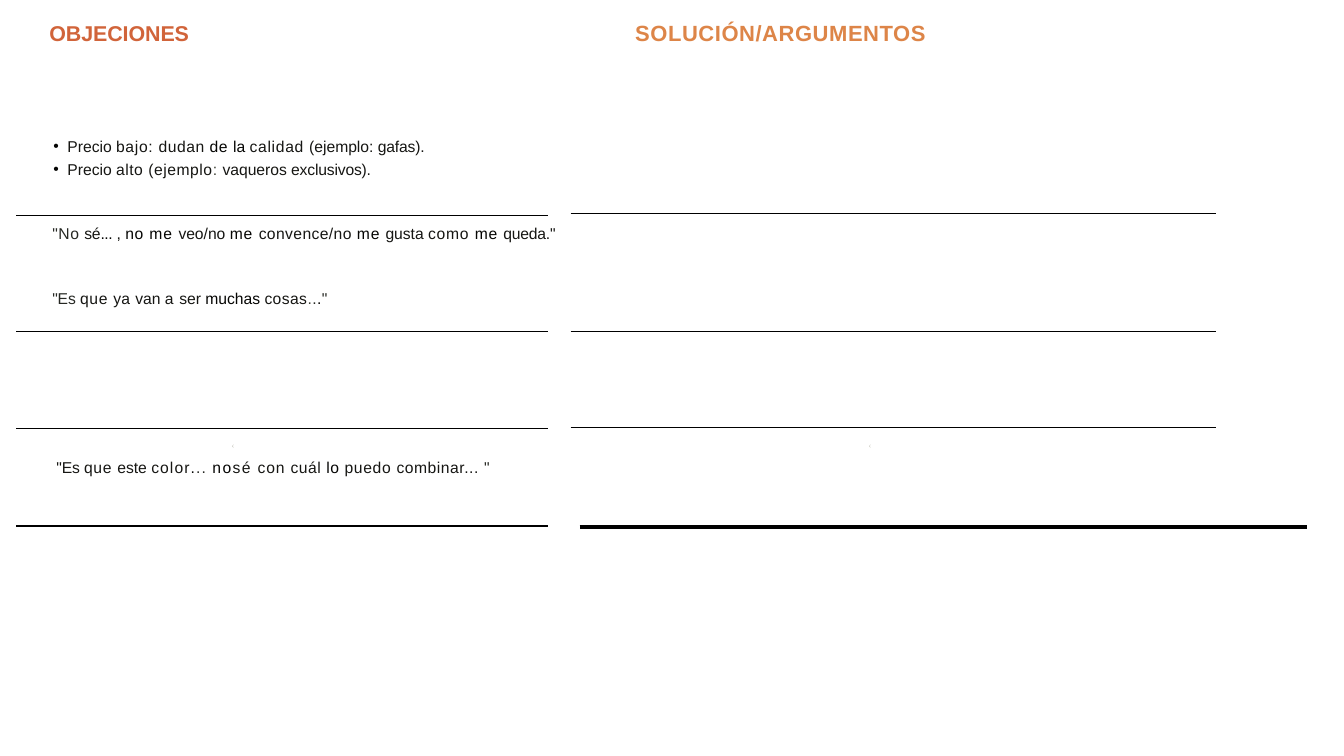
"""Builds the slide that sets customer objections beside their arguments."""
from dataclasses import dataclass

from lxml import etree
from pptx import Presentation
from pptx.dml.color import RGBColor
from pptx.enum.shapes import MSO_CONNECTOR
from pptx.enum.text import MSO_ANCHOR, MSO_AUTO_SIZE, PP_ALIGN
from pptx.oxml.ns import qn
from pptx.util import Inches, Pt

STRAIGHT = MSO_CONNECTOR.STRAIGHT
TOP = MSO_ANCHOR.TOP
LEFT = PP_ALIGN.LEFT
NO_FIT = MSO_AUTO_SIZE.NONE


@dataclass(frozen=True)
class Theme:
    font: str = "Arial"
    speck_font: str = "Times New Roman"
    deep: str = "050503"
    ink: str = "161613"
    soft: str = "262823"
    pale: str = "3F4238"
    rule: str = "000000"
    objections: str = "D1643A"
    arguments: str = "DD8548"
    left_speck: str = "959385"
    right_speck: str = "A09E8C"
    body_size: float = 11.2
    objections_size: float = 15.3
    arguments_size: float = 15.7
    speck_size: float = 2.7
    thin: float = 0.96
    thick: float = 2.41


T = Theme()


@dataclass(frozen=True)
class Run:
    text: str
    color: str = T.ink
    spacing: float = 0


@dataclass(frozen=True)
class Para:
    runs: list[Run]
    before: float = 0
    margin: float = 0.01
    bullet: bool = False
    line: float = 1


@dataclass(frozen=True)
class Block:
    left: float
    top: float
    width: float
    height: float
    inset: float
    paras: list[Para]
    size: float = T.body_size
    font: str = T.font
    bold: bool = False


@dataclass(frozen=True)
class Rule:
    left: float
    y: float
    width: float
    weight: float = T.thin


HEADING = Block(0.31, 0.13, 5.17, 0.33, 0.07, [
    Para([Run("OBJECIONES", T.objections, -0.1)], margin=0.18),
], T.objections_size, bold=True)

BLOCKS = [
    Block(6.24, 0.13, 5.17, 0.33, 0.06, [
        Para([Run("SOLUCIÓN/ARGUMENTOS", T.arguments, 0.4)], margin=0.06),
    ], T.arguments_size, bold=True),
    Block(0.51, 1.31, 5.17, 1.76, 0.05, [
        Para([
            Run("Precio "), Run("bajo: ", spacing=0.5), Run("dudan ", spacing=0.4),
            Run("de ", T.deep, 0.4), Run("la ", T.deep), Run("calidad ", spacing=0.5),
            Run("(ejemplo: "), Run("gafas).", spacing=-0.1),
        ], margin=0.16, bullet=True),
        Para([
            Run("Precio "), Run("alto (ejemplo", spacing=0.4), Run(": ", T.pale, 0.4),
            Run("vaqueros "), Run("exclusivos).", spacing=-0.1),
        ], before=2.9, margin=0.16, bullet=True),
        Para([
            Run("\"No ", T.soft, 0.4), Run("sé", spacing=-0.3), Run("... ", T.deep, -0.3),
            Run(", "), Run("no ", T.deep, 0.6), Run("me ", T.deep, 0.7), Run("veo/no "),
            Run("me ", T.deep, 0.7), Run("convence/no ", spacing=0.3),
            Run("me ", T.deep, 0.6), Run("gusta "), Run("como ", spacing=0.6),
            Run("me ", T.deep, 0.6), Run("queda.\"", spacing=-0.1),
        ], before=29, line=1.22),
        Para([
            Run("\"Es ", T.soft, -0.1), Run("que ", spacing=0.5), Run("ya ", spacing=0.3),
            Run("van "), Run("a ", spacing=0.5), Run("ser "), Run("muchas ", T.deep),
            Run("cosas", spacing=0.3), Run(".", T.pale, 0.3), Run(".", T.soft, 0.3),
            Run(".", T.deep, 0.3), Run("\"", T.soft, 0.3),
        ], before=33),
    ]),
    Block(0.55, 4.49, 4.31, 0.24, 0.05, [
        Para([
            Run("\"Es ", spacing=-0.1), Run("que ", spacing=0.5), Run("este "),
            Run("color", spacing=0.8), Run(".", T.deep, 0.8), Run(".. ", T.soft, 0.8),
            Run("no", T.deep, 1), Run("sé ", spacing=1), Run("con ", spacing=0.6),
            Run("cuál ", spacing=0.4), Run("lo ", T.deep, 0.4), Run("puedo ", spacing=0.5),
            Run("combinar... ", spacing=0.4), Run("\"", T.soft, -0.3),
        ]),
    ]),
    *(Block(left, 4.39, 0.05, 0.06, 0.01, [Para([Run(".(", color, -0.2)])],
            T.speck_size, T.speck_font)
      for left, color in ((2.29, T.left_speck), (8.61, T.right_speck))),
]

RULES = [
    *(Rule(0.16, y, 5.28) for y in (2.14, 3.29, 4.25, 5.22)),
    *(Rule(5.66, y, 6.4) for y in (2.12, 3.29, 4.24)),
    Rule(5.75, 5.23, 7.21, T.thick),
]


def set_indent(p, para: Para) -> None:
    """Set the left margin and, where asked, the hanging bullet."""
    pPr = p._p.get_or_add_pPr()
    pPr.set("marL", str(Inches(para.margin)))
    pPr.set("indent", str(Inches(-0.14 if para.bullet else 0)))
    if para.bullet:
        color = etree.SubElement(pPr, qn("a:buClr"))
        etree.SubElement(color, qn("a:srgbClr"), val=T.deep)
        etree.SubElement(pPr, qn("a:buFont"), typeface=T.font)
        etree.SubElement(pPr, qn("a:buChar"), char="•")


def fill_block(s, block: Block) -> None:
    """Place a text shape and write its paragraphs."""
    s.left, s.top = Inches(block.left), Inches(block.top)
    s.width, s.height = Inches(block.width), Inches(block.height)
    tf = s.text_frame
    tf.word_wrap = True
    tf.auto_size = NO_FIT
    tf.vertical_anchor = TOP
    tf.margin_left = tf.margin_right = tf.margin_bottom = 0
    tf.margin_top = Inches(block.inset)
    for i, para in enumerate(block.paras):
        p = tf.add_paragraph() if i else tf.paragraphs[0]
        set_indent(p, para)
        p.alignment = LEFT
        p.space_before = Pt(para.before)
        p.line_spacing = para.line
        for run in para.runs:
            r = p.add_run()
            r.text = run.text
            r.font.name = block.font
            r.font.size = Pt(block.size)
            r.font.bold = block.bold
            r.font.color.rgb = RGBColor.from_string(run.color)
            r._r.get_or_add_rPr().set("spc", str(round(run.spacing * 100)))


def draw_rule(slide, rule: Rule) -> None:
    """Draw one horizontal rule."""
    y = Inches(rule.y)
    s = slide.shapes.add_connector(
        STRAIGHT, Inches(rule.left), y, Inches(rule.left + rule.width), y)
    s.line.color.rgb = RGBColor.from_string(T.rule)
    s.line.width = Pt(rule.weight)
    etree.SubElement(s._element.spPr, qn("a:effectLst"))


def main() -> None:
    """Build and save the slide."""
    prs = Presentation()
    prs.slide_width, prs.slide_height = Inches(13.33), Inches(7.5)
    slide = prs.slides.add_slide(prs.slide_layouts[5])
    fill_block(slide.shapes.title, HEADING)
    for rule in RULES:
        draw_rule(slide, rule)
    for block in BLOCKS:
        fill_block(slide.shapes.add_textbox(0, 0, 0, 0), block)
    prs.save("out.pptx")


if __name__ == "__main__":
    main()
